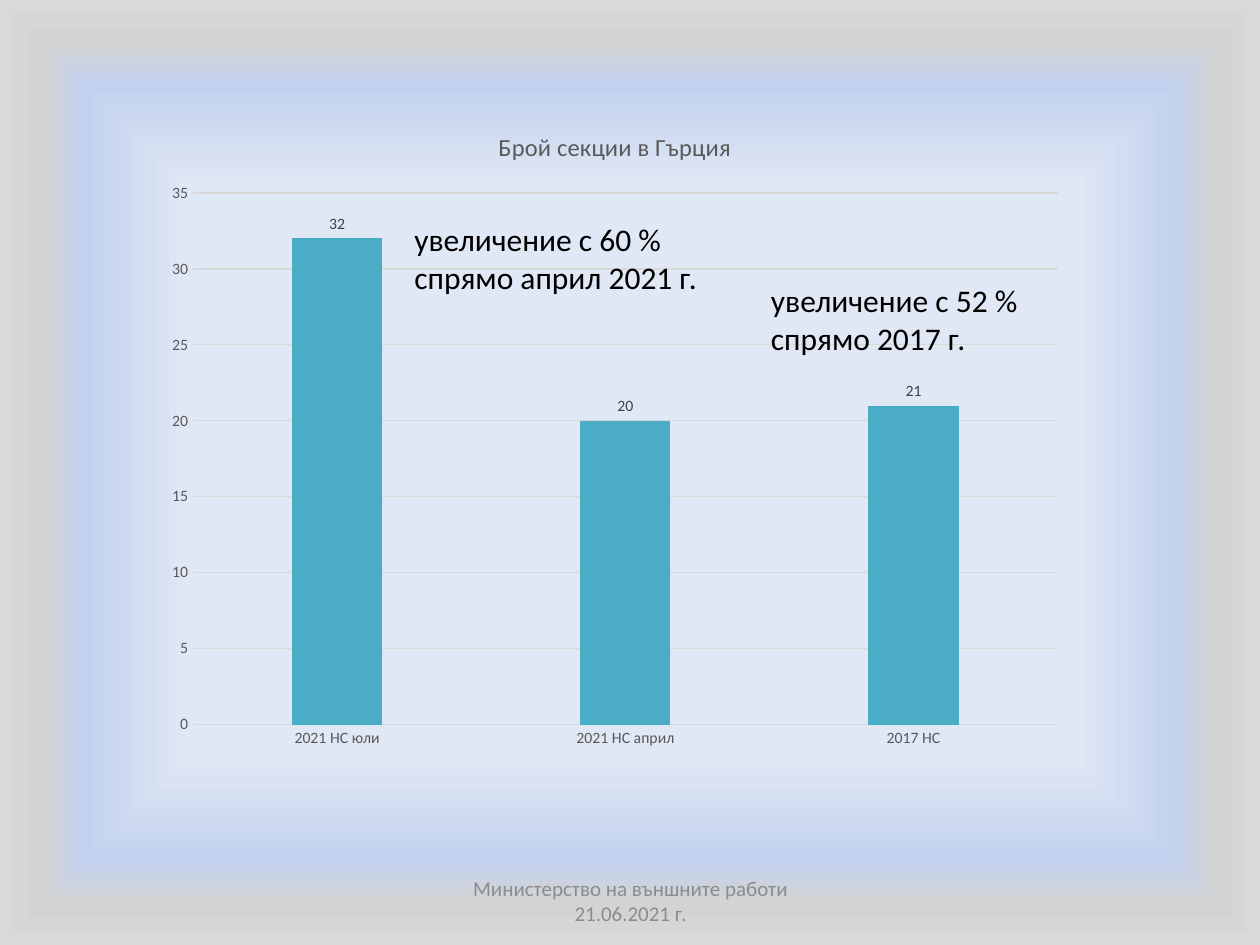
from lxml import etree
from pptx import Presentation
from pptx.chart.data import CategoryChartData
from pptx.dml.color import RGBColor
from pptx.enum.chart import XL_CHART_TYPE as ChartType
from pptx.enum.chart import XL_LABEL_POSITION as LabelPosition
from pptx.enum.chart import XL_TICK_MARK as TickMark
from pptx.enum.text import MSO_ANCHOR as Anchor
from pptx.enum.text import PP_ALIGN as Align
from pptx.oxml.ns import qn
from pptx.util import Inches, Pt

FONT = "Calibri"
COLORS = {
    "bar": "4BACC6",
    "grid": "D9D9D9",
    "axis": "595959",
    "label": "404040",
    "footer": "8C8C8C",
    "text": "000000",
}
GLOW_STOPS = [(60, "E1E8F5"), (82, "C2D1ED"), (91, "D3D3D3"), (100, "D9D9D9")]
TITLE = "Брой секции в Гърция"
SECTIONS = {"2021 НС юли": 32, "2021 НС април": 20, "2017 НС": 21}


def color(name):
    return RGBColor.from_string(COLORS[name])


def style_font(font, size, color_name):
    font.name = FONT
    font.size = Pt(size)
    font.bold = False
    font.color.rgb = color(color_name)


def style_line(line):
    line.color.rgb = color("grid")
    line.width = Pt(0.75)


def fill_background(page):
    """Fill the page with a gradient that spreads from its centre."""
    page.background.fill.gradient()
    gradient = page.element.find(".//" + qn("a:gradFill"))
    for child in list(gradient):
        gradient.remove(child)
    stops = etree.SubElement(gradient, qn("a:gsLst"))
    for position, shade in GLOW_STOPS:
        stop = etree.SubElement(stops, qn("a:gs"), pos=str(position * 1000))
        etree.SubElement(stop, qn("a:srgbClr"), val=shade)
    spread = etree.SubElement(gradient, qn("a:path"), path="shape")
    centre = {side: "50000" for side in "ltrb"}
    etree.SubElement(spread, qn("a:fillToRect"), **centre)


def add_text(page, bounds, text, size, color_name, align=Align.LEFT, anchor=Anchor.TOP):
    box = page.shapes.add_textbox(*map(Inches, bounds))
    frame = box.text_frame
    frame.word_wrap = True
    frame.vertical_anchor = anchor
    para = frame.paragraphs[0]
    para.alignment = align
    span = para.add_run()
    span.text = text
    style_font(span.font, size, color_name)


def add_section_chart(page, bounds):
    data = CategoryChartData()
    data.categories = list(SECTIONS)
    data.add_series(TITLE, list(SECTIONS.values()))
    frame = page.shapes.add_chart(
        ChartType.COLUMN_CLUSTERED, *map(Inches, bounds), data
    )
    chart = frame.chart
    style_font(chart.font, 10, "text")
    chart.has_legend = False

    chart.has_title = True
    span = chart.chart_title.text_frame.paragraphs[0].add_run()
    span.text = TITLE
    style_font(span.font, 14, "axis")
    chart.chart_title.include_in_layout = False

    for axis in (chart.category_axis, chart.value_axis):
        axis.major_tick_mark = TickMark.NONE
        axis.minor_tick_mark = TickMark.NONE
        style_font(axis.tick_labels.font, 9, "axis")
    style_line(chart.category_axis.format.line)
    values = chart.value_axis
    values.format.line.fill.background()
    values.minimum_scale, values.maximum_scale, values.major_unit = 0, 35, 5
    style_line(values.major_gridlines.format.line)

    plot = chart.plots[0]
    plot.gap_width = 219
    plot.overlap = -27
    plot.vary_by_categories = False
    bars = plot.series[0]
    bars.format.fill.solid()
    bars.format.fill.fore_color.rgb = color("bar")
    labels = bars.data_labels
    labels.show_value = True
    labels.position = LabelPosition.OUTSIDE_END
    style_font(labels.font, 9, "label")


def main():
    deck = Presentation()
    deck.slide_width, deck.slide_height = Inches(10), Inches(7.5)
    page = deck.slides.add_slide(deck.slide_layouts[6])
    fill_background(page)
    add_text(page, (3.42, 6.95, 3.17, 0.4),
             "Министерство на външните работи 21.06.2021 г.",
             12, "footer", Align.CENTER, Anchor.MIDDLE)
    add_section_chart(page, (1.22, 0.84, 7.32, 5.2))
    add_text(page, (3.19, 1.7, 2.52, 0.71),
             "увеличение с 60 % спрямо април 2021 г.", 18, "text")
    add_text(page, (6.02, 2.18, 2.52, 0.71),
             "увеличение с 52 % спрямо 2017 г.", 18, "text")
    deck.save("out.pptx")


if __name__ == "__main__":
    main()
